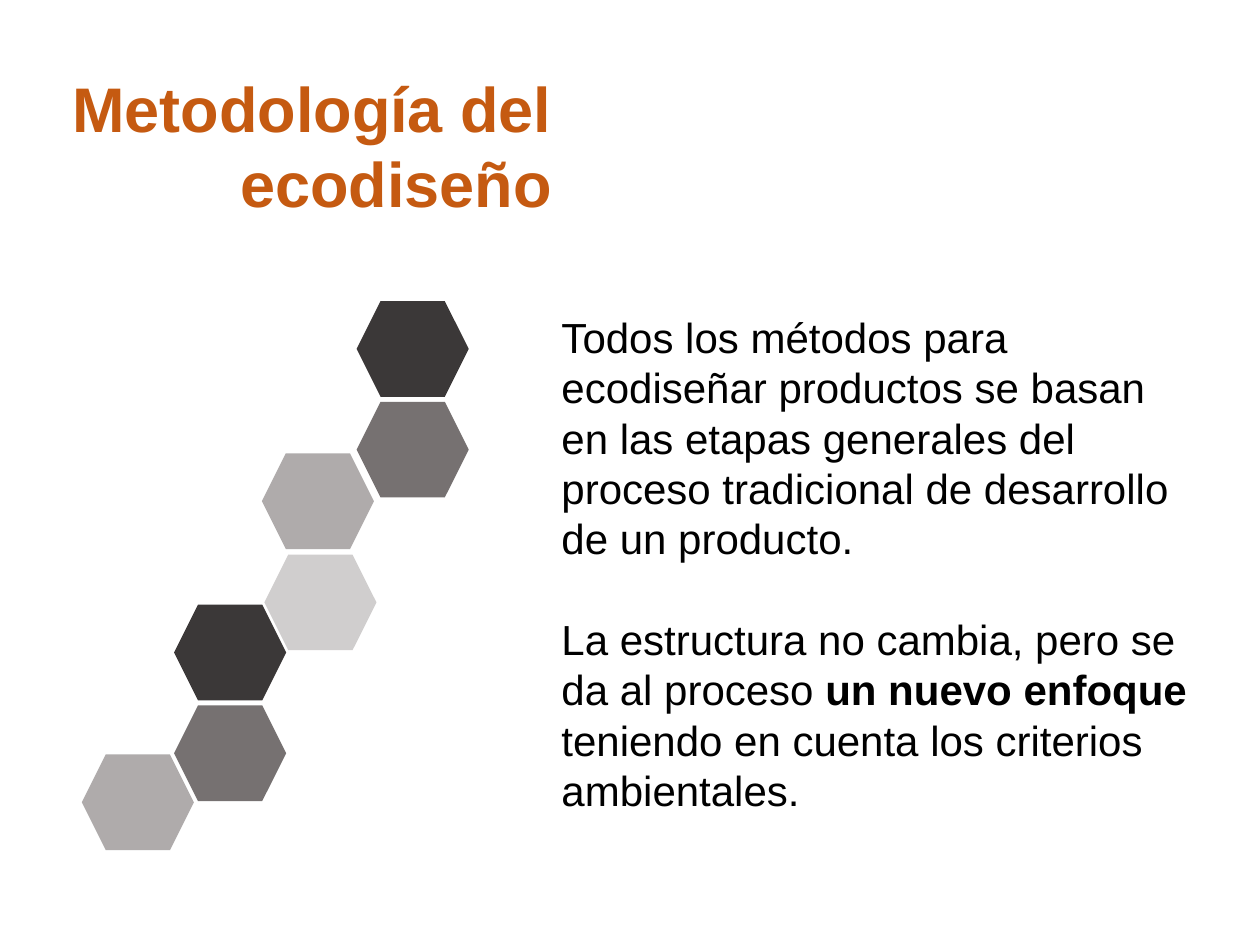
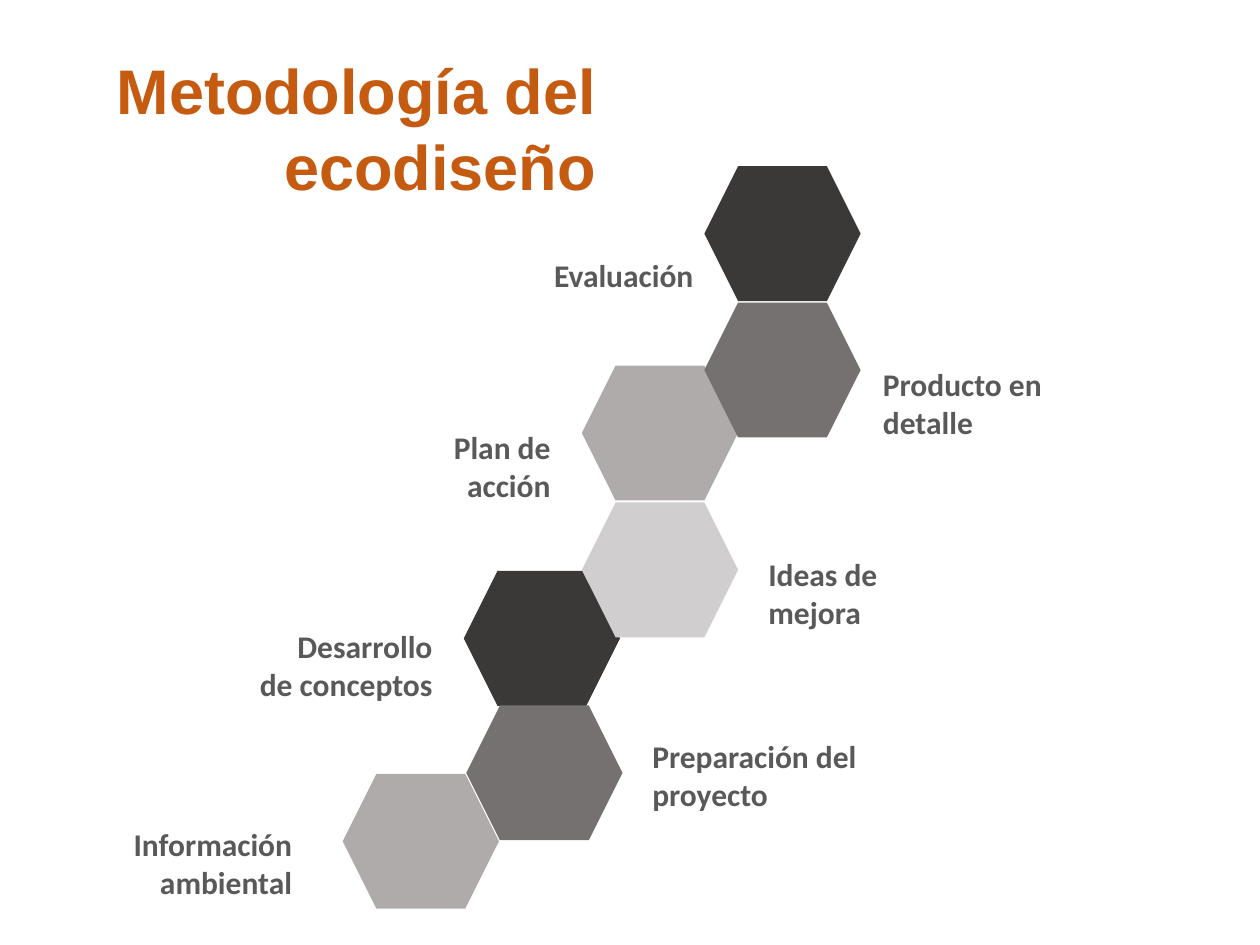
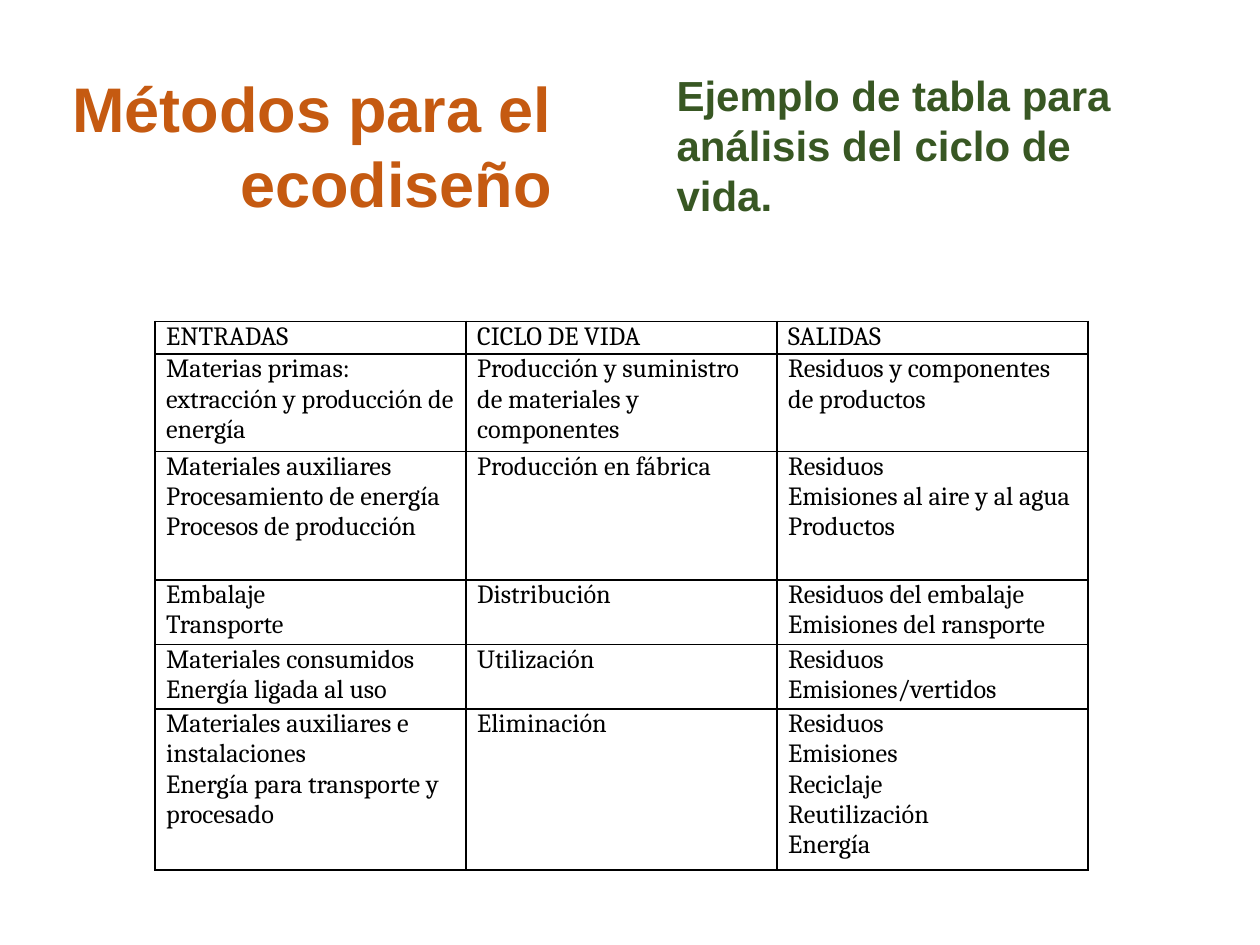
from lxml.etree import SubElement
from pptx import Presentation
from pptx.dml.color import RGBColor
from pptx.enum.shapes import MSO_SHAPE
from pptx.enum.text import MSO_ANCHOR, MSO_AUTO_SIZE, PP_ALIGN
from pptx.oxml.ns import qn
from pptx.util import Cm, Pt

COLORS = {
    "title": "C55A11",
    "subtitle": "385723",
    "body": "000000",
    "label": "595959",
    "charcoal": "3B3838",
    "gray": "767171",
    "silver": "AFABAB",
    "pale": "D0CECE",
}

# Drawing order, from the first stage upwards
STAGE_COLORS = ["silver", "charcoal", "gray", "pale", "silver", "gray", "charcoal"]

OVERVIEW_STAIRS = [(1.65, 15.21), (3.51, 12.19), (3.51, 14.22), (5.33, 11.18),
                   (5.28, 9.14), (7.19, 8.1), (7.19, 6.07)]
STAGE_STAIRS = [(6.91, 15.6), (9.35, 11.51), (9.4, 14.22), (11.73, 10.13),
                (11.73, 7.37), (14.2, 6.1), (14.2, 3.35)]

# Text, left, top, width, height, alignment
STAGE_LABELS = [
    ("Preparación del proyecto", 12.9, 14.73, 6.9, 1.8, PP_ALIGN.LEFT),
    ("Información ambiental", 0.94, 16.51, 5.2, 1.8, PP_ALIGN.RIGHT),
    ("Ideas de mejora", 15.24, 11.07, 4.06, 1.8, PP_ALIGN.LEFT),
    ("Desarrollo de conceptos", 4.96, 12.52, 4.01, 1.8, PP_ALIGN.RIGHT),
    ("Producto en detalle", 17.55, 7.24, 4.57, 1.8, PP_ALIGN.LEFT),
    ("Plan de acción", 8.73, 8.51, 2.62, 1.8, PP_ALIGN.RIGHT),
    ("Evaluación", 10.92, 5.03, 3.61, 1.02, PP_ALIGN.LEFT),
]

LIFE_CYCLE = [
    ("ENTRADAS", "CICLO DE VIDA", "SALIDAS"),
    ("Materias primas: extracción y producción de energía",
     "Producción y suministro de materiales y componentes",
     "Residuos y componentes de productos"),
    ("Materiales auxiliares\nProcesamiento de energía\nProcesos de producción",
     "Producción en fábrica",
     "Residuos\nEmisiones al aire y al agua\nProductos"),
    ("Embalaje\nTransporte", "Distribución",
     "Residuos del embalaje\nEmisiones del ransporte"),
    ("Materiales consumidos\nEnergía ligada al uso", "Utilización",
     "Residuos\nEmisiones/vertidos"),
    ("Materiales auxiliares e instalaciones\nEnergía para transporte y procesado",
     "Eliminación",
     "Residuos\nEmisiones\nReciclaje\nReutilización\nEnergía"),
]
ROW_HEIGHTS = [0.66, 1.96, 2.59, 1.3, 1.3, 3.25]


class Deck:
    """Holds the presentation, its style and the slide being built."""

    def __init__(self):
        self.prs = Presentation()
        self.prs.slide_width, self.prs.slide_height = Cm(25.4), Cm(19.05)
        self.slide = None

    def style(self, paragraph, font, size, color, bold=False, align=PP_ALIGN.LEFT):
        paragraph.alignment = align
        paragraph.font.name = font
        paragraph.font.size = Pt(size)
        paragraph.font.bold = bold
        paragraph.font.color.rgb = RGBColor.from_string(COLORS[color])

    def titled_slide(self, text, left=0, top=1.27):
        self.slide = self.prs.slides.add_slide(self.prs.slide_layouts[5])
        title = self.slide.shapes.title
        title.left, title.top = Cm(left), Cm(top)
        title.width, title.height = Cm(11.38), Cm(4.88)
        frame = title.text_frame
        frame.text = text
        frame.word_wrap = True
        frame.auto_size = MSO_AUTO_SIZE.NONE
        frame.vertical_anchor = MSO_ANCHOR.TOP
        self.style(frame.paragraphs[0], "Arial", 36, "title", True, PP_ALIGN.RIGHT)

    def text(self, paragraphs, left, top, width, height, gap=0, **style):
        """Each paragraph is a list of (text, bold) runs; gap is in points."""
        box = self.slide.shapes.add_textbox(Cm(left), Cm(top), Cm(width), Cm(height))
        frame = box.text_frame
        frame.word_wrap = True
        for index, runs in enumerate(paragraphs):
            paragraph = frame.add_paragraph() if index else frame.paragraphs[0]
            self.style(paragraph, **style)
            if index:
                paragraph.space_before = Pt(gap)
            for words, bold in runs:
                run = paragraph.add_run()
                run.text = words
                if bold:
                    run.font.bold = True

    def hexagon_stairs(self, corners, width, height):
        for (left, top), color in zip(corners, STAGE_COLORS):
            hexagon = self.slide.shapes.add_shape(
                MSO_SHAPE.HEXAGON, Cm(left), Cm(top), Cm(width), Cm(height))
            hexagon.shadow.inherit = False
            hexagon.fill.solid()
            hexagon.fill.fore_color.rgb = RGBColor.from_string(COLORS[color])
            hexagon.line.fill.background()

    def border(self, cell):
        properties = cell._tc.get_or_add_tcPr()
        for side in ("a:lnL", "a:lnR", "a:lnT", "a:lnB"):
            line = SubElement(properties, qn(side), w=str(Pt(1)))
            fill = SubElement(line, qn("a:solidFill"))
            SubElement(fill, qn("a:srgbClr"), val=COLORS["body"])

    def table(self, rows, heights, left, top, column_width):
        columns = len(rows[0])
        table = self.slide.shapes.add_table(
            len(rows), columns, Cm(left), Cm(top),
            Cm(column_width * columns), Cm(sum(heights))).table
        table.first_row = table.horz_banding = False
        for column in table.columns:
            column.width = Cm(column_width)
        for row, height, entries in zip(table.rows, heights, rows):
            row.height = Cm(height)
            for cell, entry in zip(row.cells, entries):
                cell.text = entry
                cell.margin_left = cell.margin_right = Cm(0.23)
                cell.margin_top = cell.margin_bottom = 0
                for paragraph in cell.text_frame.paragraphs:
                    self.style(paragraph, "Cambria", 15, "body")
                self.border(cell)
                cell.fill.background()


def main():
    deck = Deck()

    deck.titled_slide("Metodología del ecodiseño")
    deck.text(
        [[("Todos los métodos para ecodiseñar productos se basan en las etapas "
           "generales del proceso tradicional de desarrollo de un producto.", False)],
         [("La estructura no cambia, pero se da al proceso ", False),
          ("un nuevo enfoque ", True),
          ("teniendo en cuenta los criterios ambientales.", False)]],
        11.07, 6.15, 13.28, 10.52, gap=28.75, font="Arial", size=24, color="body")
    deck.hexagon_stairs(OVERVIEW_STAIRS, 2.26, 1.93)

    deck.titled_slide("Metodología del ecodiseño", 0.89, 0.91)
    deck.hexagon_stairs(STAGE_STAIRS, 3.15, 2.72)
    for label, left, top, width, height, align in STAGE_LABELS:
        deck.text([[(label, False)]], left, top, width, height,
                  font="Calibri", size=18, color="label", bold=True, align=align)

    deck.titled_slide("Métodos para el ecodiseño")
    deck.text([[("Ejemplo de tabla para análisis del ciclo de vida.", False)]],
              13.39, 1.27, 9.42, 3.33,
              font="Arial", size=24, color="subtitle", bold=True)
    deck.table(LIFE_CYCLE, ROW_HEIGHTS, 3.12, 6.48, 6.27)

    deck.prs.save("out.pptx")


if __name__ == "__main__":
    main()
